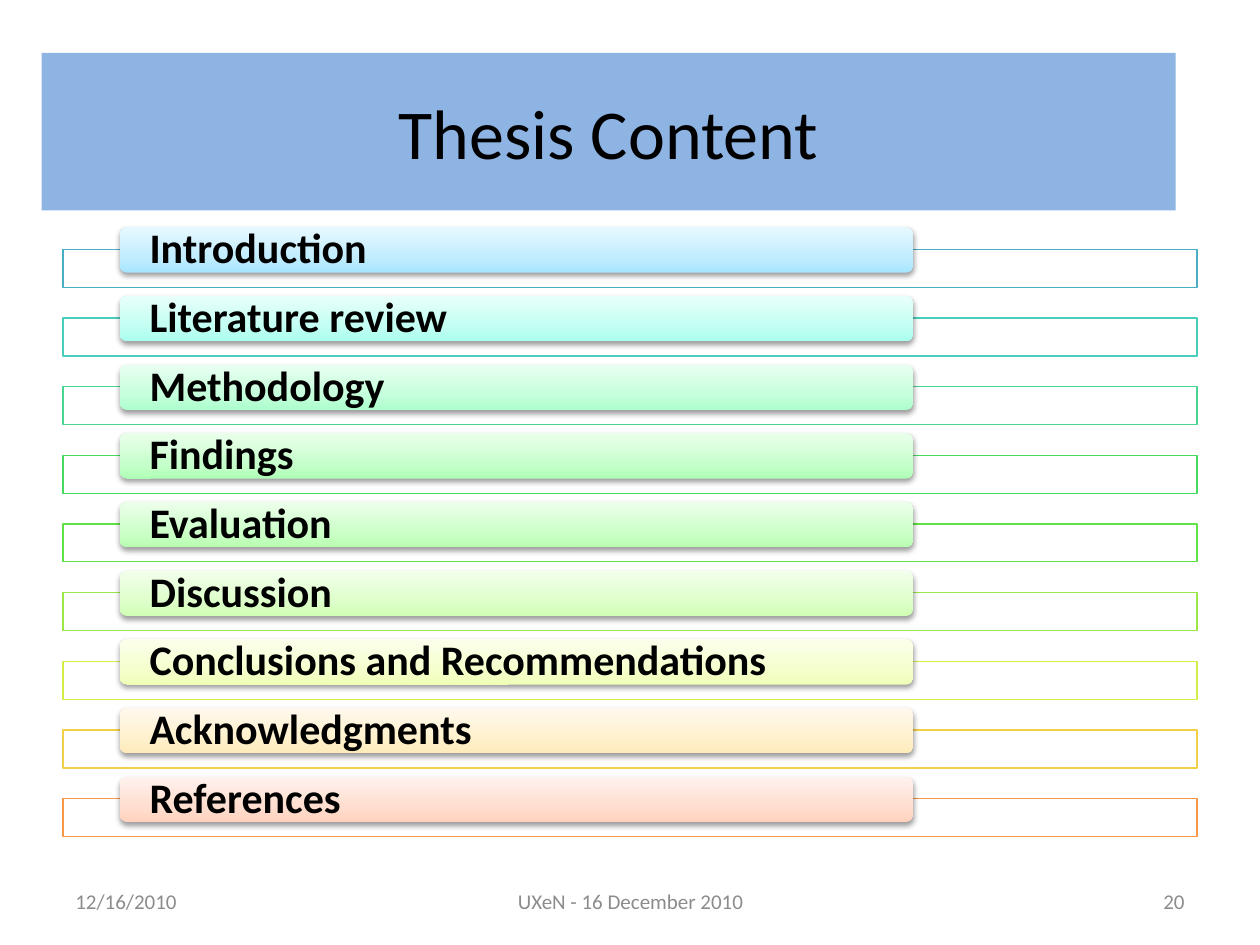
from copy import deepcopy
from dataclasses import dataclass

from lxml import etree
from pptx import Presentation
from pptx import util as u
from pptx.dml.color import RGBColor
from pptx.enum import shapes, text
from pptx.oxml.ns import qn

PX = 4572  # EMU: 200 px to the inch


@dataclass(frozen=True)
class Theme:
    font: str = "Calibri"
    ink: str = "000000"
    paper: str = "FFFFFF"
    banner: str = "8EB4E3"
    muted: str = "8C8C8C"
    title_size: int = 40
    chapter_size: int = 24
    footer_size: int = 12


@dataclass(frozen=True)
class Box:
    left: int
    top: int
    width: int
    height: int

    def emu(self) -> list[u.Emu]:
        return [u.Emu(v * PX) for v in (self.left, self.top, self.width, self.height)]

    def down(self, distance: int) -> "Box":
        return Box(self.left, self.top + distance, self.width, self.height)


@dataclass(frozen=True)
class Chapter:
    name: str
    outline: str
    gradient: tuple[str, str, str]  # bottom, middle, top


@dataclass(frozen=True)
class FooterPart:
    wording: str
    box: Box
    align: text.PP_ALIGN


THEME = Theme()
BANNER = Box(66, 84, 1800, 250)
FRAME = Box(100, 396, 1800, 60)
PILL = Box(190, 361, 1260, 72)
PITCH = 109
PILL_INSET = 44
GRADIENT_POSITIONS = (0, 0.35, 1)

CHAPTERS = (
    Chapter("Introduction", "4BACC6", ("A7E6FF", "C1EDFF", "E7F8FF")),
    Chapter("Literature review", "49CDBB", ("AAFFEF", "C3FFF3", "E8FFFA")),
    Chapter("Methodology", "48D491", ("ADFFCD", "C5FFDB", "E9FFF1")),
    Chapter("Findings", "47DA61", ("B0FFB7", "C7FFCC", "EAFFEB")),
    Chapter("Evaluation", "60E146", ("B9FFB2", "CDFFC9", "ECFFEA")),
    Chapter("Discussion", "98E746", ("D1FFB5", "DEFFCB", "F2FFEB")),
    Chapter("Conclusions and Recommendations", "D5EC46", ("F0FFB8", "F4FFCD", "FBFFEC")),
    Chapter("Acknowledgments", "F2CF46", ("FFEBBA", "FFF1CE", "FFF9ED")),
    Chapter("References", "F79646", ("FFD2BD", "FFDED0", "FFF2ED")),
)

FOOTER = (
    FooterPart("12/16/2010", Box(100, 1390, 466, 80), text.PP_ALIGN.LEFT),
    FooterPart("UXeN - 16 December 2010", Box(684, 1390, 634, 80), text.PP_ALIGN.CENTER),
    FooterPart("20", Box(1434, 1390, 466, 80), text.PP_ALIGN.RIGHT),
)


def rgb(code: str) -> RGBColor:
    return RGBColor.from_string(code)


def write(shape, wording: str, size: int, color: str, align, bold: bool = False) -> None:
    frame = shape.text_frame
    frame.text = wording
    frame.word_wrap = True
    frame.vertical_anchor = text.MSO_ANCHOR.MIDDLE
    paragraph = frame.paragraphs[0]
    paragraph.alignment = align
    font = paragraph.runs[0].font
    font.name, font.size, font.bold = THEME.font, u.Pt(size), bold
    font.color.rgb = rgb(color)


def set_alpha(parent, percent: int) -> None:
    color = next(parent.iter(qn("a:srgbClr")))
    etree.SubElement(color, qn("a:alpha"), val=str(percent * 1000))


def add_soft_shadow(shape) -> None:
    shape.shadow.inherit = False
    effects = shape._element.spPr.find(qn("a:effectLst"))
    shadow = etree.SubElement(
        effects, qn("a:outerShdw"), blurRad=str(u.Pt(3.1)), dist=str(u.Pt(1.6)),
        dir="5400000", rotWithShape="0")
    etree.SubElement(shadow, qn("a:srgbClr"), val=THEME.ink)
    set_alpha(effects, 38)


def fill_gradient(shape, colors: tuple[str, str, str]) -> None:
    shape.fill.gradient()
    shape.fill.gradient_angle = 90
    stop_list = next(shape._element.spPr.iter(qn("a:gsLst")))
    stop_list.insert(1, deepcopy(stop_list[0]))
    for stop, position, color in zip(shape.fill.gradient_stops, GRADIENT_POSITIONS, colors):
        stop.position = position
        stop.color.rgb = rgb(color)


def add_chapter(slide, chapter: Chapter, offset: int) -> None:
    # Outlined frame behind
    frame = slide.shapes.add_shape(
        shapes.MSO_SHAPE.RECTANGLE, *FRAME.down(offset).emu())
    frame.shadow.inherit = False
    frame.fill.solid()
    frame.fill.fore_color.rgb = rgb(THEME.paper)
    set_alpha(frame._element.spPr, 90)
    frame.line.color.rgb = rgb(chapter.outline)
    frame.line.width = u.Pt(0.75)

    # Shaded pill with the chapter name
    pill = slide.shapes.add_shape(
        shapes.MSO_SHAPE.ROUNDED_RECTANGLE, *PILL.down(offset).emu())
    fill_gradient(pill, chapter.gradient)
    pill.line.fill.background()
    add_soft_shadow(pill)
    write(pill, chapter.name, THEME.chapter_size, THEME.ink, text.PP_ALIGN.LEFT, bold=True)
    body = pill.text_frame
    body.margin_left = body.margin_right = u.Emu(PILL_INSET * PX)
    body.margin_top = body.margin_bottom = 0
    body.paragraphs[0].line_spacing = 0.9


def add_footer_part(slide, part: FooterPart) -> None:
    box = slide.shapes.add_textbox(*part.box.emu())
    write(box, part.wording, THEME.footer_size, THEME.muted, part.align)


def main() -> None:
    deck = Presentation()
    deck.slide_width, deck.slide_height = u.Emu(2000 * PX), u.Emu(1500 * PX)
    slide = deck.slides.add_slide(deck.slide_layouts[5])

    # Title banner
    title = slide.shapes.title
    title.left, title.top, title.width, title.height = BANNER.emu()
    title.fill.solid()
    title.fill.fore_color.rgb = rgb(THEME.banner)
    write(title, "Thesis Content", THEME.title_size, THEME.ink, text.PP_ALIGN.CENTER)

    # Chapter list
    for row, chapter in enumerate(CHAPTERS):
        add_chapter(slide, chapter, row * PITCH)

    # Footer
    for part in FOOTER:
        add_footer_part(slide, part)

    deck.save("out.pptx")


if __name__ == "__main__":
    main()
